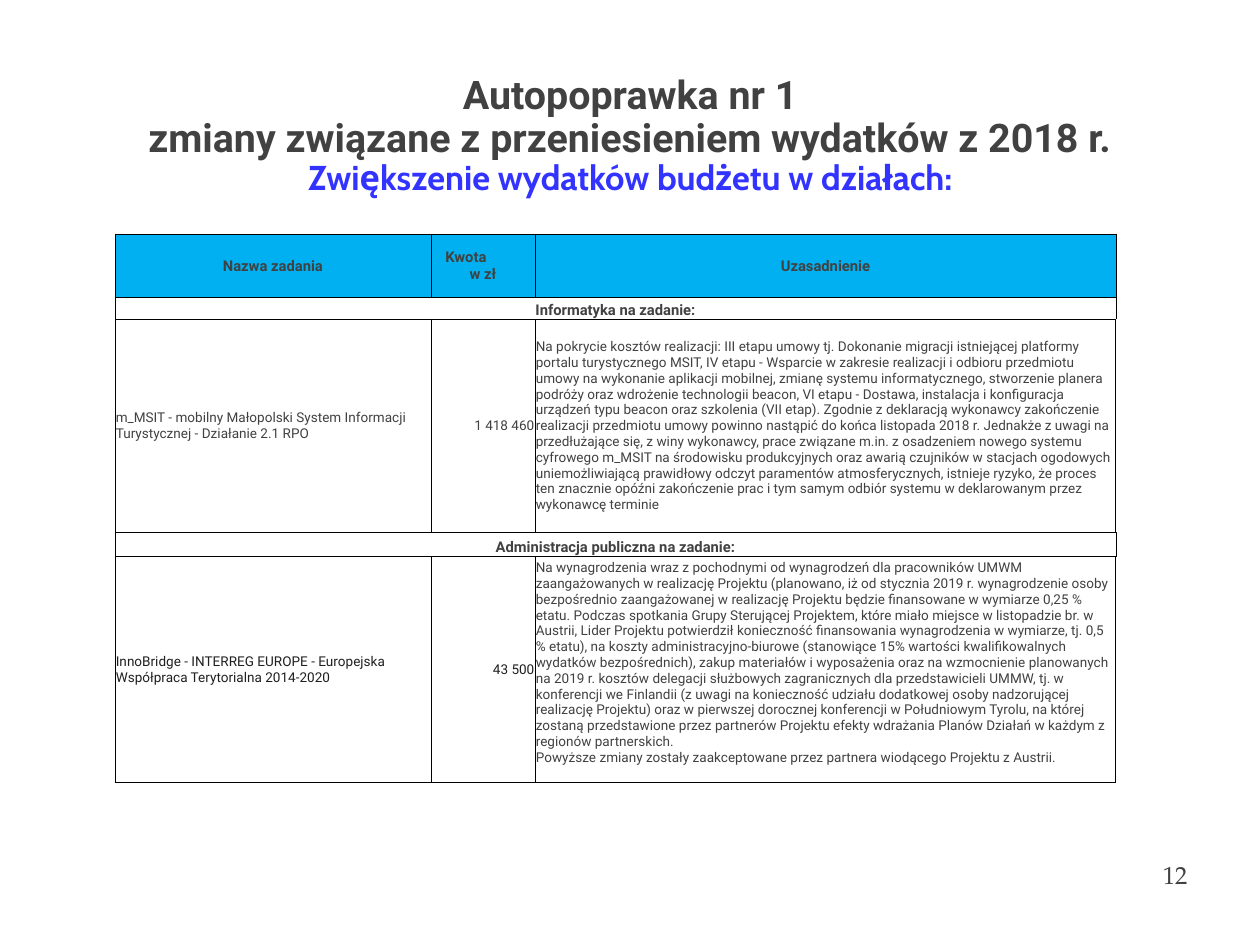
from lxml import etree
from pptx import Presentation
from pptx.dml.color import RGBColor
from pptx.enum import text
from pptx.oxml.ns import qn
from pptx.util import Cm, Pt

COLOURS = {"dark": "414141", "black": "202020", "blue": "3333FF",
           "header": "00B0F0", "border": "000000"}
LEFT, CENTRE, RIGHT = text.PP_ALIGN.LEFT, text.PP_ALIGN.CENTER, text.PP_ALIGN.RIGHT
MIDDLE, BOTTOM = text.MSO_ANCHOR.MIDDLE, text.MSO_ANCHOR.BOTTOM

COLUMNS = [9.05, 2.99, 16.65]
ROWS = [1.82, 0.62, 6.12, 0.69, 6.36]
SECTIONS = {1: "Informatyka na zadanie:", 3: "Administracja publiczna na zadanie:"}
# Each reason is a list of paragraphs, each paragraph a list of sentences.
MSIT_REASON = [[
    "Na pokrycie kosztów realizacji: III etapu umowy tj. Dokonanie migracji istniejącej "
    "platformy portalu turystycznego MSIT, IV etapu - Wsparcie w zakresie realizacji i "
    "odbioru przedmiotu umowy na wykonanie aplikacji mobilnej, zmianę systemu "
    "informatycznego, stworzenie planera podróży oraz wdrożenie technologii beacon, VI "
    "etapu - Dostawa, instalacja i konfiguracja urządzeń typu beacon oraz szkolenia (VII "
    "etap).",
    "Zgodnie z deklaracją wykonawcy zakończenie realizacji przedmiotu umowy powinno "
    "nastąpić do końca listopada 2018 r.",
    "Jednakże z uwagi na przedłużające się, z winy "
    "wykonawcy, prace związane m.in. z osadzeniem nowego systemu cyfrowego m_MSIT na "
    "środowisku produkcyjnych oraz awarią czujników w stacjach ogodowych uniemożliwiającą "
    "prawidłowy odczyt paramentów atmosferycznych, istnieje ryzyko, że proces ten znacznie "
    "opóźni zakończenie prac i tym samym odbiór systemu w deklarowanym przez wykonawcę "
    "terminie",
]]
BRIDGE_REASON = [[
    "Na wynagrodzenia wraz z pochodnymi od wynagrodzeń dla pracowników UMWM zaangażowanych "
    "w realizację Projektu (planowano, iż od stycznia 2019 r. wynagrodzenie osoby "
    "bezpośrednio zaangażowanej w realizację Projektu będzie finansowane w wymiarze 0,25 % "
    "etatu.",
    "Podczas spotkania Grupy Sterującej Projektem, które miało miejsce w listopadzie "
    "br. w Austrii, Lider Projektu potwierdził konieczność finansowania wynagrodzenia w "
    "wymiarze, tj. 0,5 % etatu), na koszty administracyjno-biurowe (stanowiące 15% wartości "
    "kwalifikowalnych wydatków bezpośrednich), zakup materiałów i wyposażenia oraz na "
    "wzmocnienie planowanych na 2019 r. kosztów delegacji służbowych zagranicznych dla "
    "przedstawicieli UMMW,",
    "tj. w konferencji we Finlandii (z uwagi na konieczność udziału "
    "dodatkowej osoby nadzorującej realizację Projektu) oraz w pierwszej dorocznej "
    "konferencji w Południowym Tyrolu, na której zostaną przedstawione przez partnerów "
    "Projektu efekty wdrażania Planów Działań w każdym z regionów partnerskich.",
], [
    "Powyższe zmiany zostały zaakceptowane przez partnera wiodącego Projektu z Austrii.",
]]
TASKS = {
    2: ("m_MSIT - mobilny Małopolski System Informacji Turystycznej - Działanie 2.1 RPO",
        "1 418 460", MSIT_REASON, "dark"),
    4: ("InnoBridge - INTERREG EUROPE - Europejska Współpraca Terytorialna 2014-2020",
        "43 500", BRIDGE_REASON, "black"),
}


def add_span(para, words, size, font="Roboto", colour="dark", bold=False):
    span = para.add_run()
    span.text = words
    span.font.name = font
    span.font.size = Pt(size)
    span.font.bold = bold
    span.font.color.rgb = RGBColor.from_string(COLOURS[colour])


def add_box(page, left, top, width, height, inset=0):
    """Add a centred, wrapping text box and return its first paragraph."""
    frame = page.shapes.add_textbox(Cm(left), Cm(top), Cm(width), Cm(height)).text_frame
    frame.word_wrap = True
    frame.vertical_anchor = MIDDLE
    frame.margin_left = frame.margin_right = Cm(inset)
    frame.margin_top = frame.margin_bottom = Cm(inset)
    para = frame.paragraphs[0]
    para.alignment = CENTRE
    return para


def add_title(page):
    para = add_box(page, 1.42, 2.24, 33.3, 3.38)
    para.line_spacing = 0.9
    for line in ("Autopoprawka nr 1", "zmiany związane z przeniesieniem wydatków z 2018 r."):
        add_span(para, line, 32, bold=True)
        para.add_line_break()
    add_span(para, "Zwiększenie wydatków budżetu w działach:", 28, "Cabin", "blue", True)


def set_borders(cell, outer_left, outer_right):
    """Draw thin borders, thicker on the outer sides that are flagged."""
    properties = cell._tc.get_or_add_tcPr()
    widths = {"L": 1 if outer_left else 0.5, "R": 1 if outer_right else 0.5,
              "T": 0.5, "B": 0.5}
    for side, width in widths.items():
        line = etree.SubElement(properties, qn(f"a:ln{side}"), w=str(Pt(width)))
        fill = etree.SubElement(line, qn("a:solidFill"))
        etree.SubElement(fill, qn("a:srgbClr"), val=COLOURS["border"])


def fill_cell(cell, lines, size, align=LEFT, colour="dark", bold=False, anchor=MIDDLE):
    cell.vertical_anchor = anchor
    frame = cell.text_frame
    for number, line in enumerate(lines):
        para = frame.add_paragraph() if number else frame.paragraphs[0]
        para.alignment = align
        add_span(para, line, size, colour=colour, bold=bold)


def add_grid(page):
    table = page.shapes.add_table(len(ROWS), len(COLUMNS), Cm(3.3), Cm(6.71),
                                  Cm(sum(COLUMNS)), Cm(sum(ROWS))).table
    table.first_row = table.horz_banding = False
    for column, width in zip(table.columns, COLUMNS):
        column.width = Cm(width)
    for row, height in zip(table.rows, ROWS):
        row.height = Cm(height)
    last = len(COLUMNS) - 1
    for row in range(len(ROWS)):
        for column in range(len(COLUMNS)):
            cell = table.cell(row, column)
            set_borders(cell, row > 1 and column == 0, row > 1 and column == last)
            cell.margin_left = cell.margin_right = cell.margin_top = Cm(0.02)
            cell.margin_bottom = 0
            if row == 0:
                cell.fill.solid()
                cell.fill.fore_color.rgb = RGBColor.from_string(COLOURS["header"])
            else:
                cell.fill.background()
    return table


def add_budget_table(page):
    table = add_grid(page)
    headings = (["Nazwa zadania"], ["Kwota", "w zł"], ["Uzasadnienie"])
    for column, heading in enumerate(headings):
        fill_cell(table.cell(0, column), heading, 12, CENTRE, bold=True)
    amount_heading = table.cell(0, 1).text_frame.paragraphs[0]
    amount_heading.alignment = LEFT
    amount_heading._p.get_or_add_pPr().set("marL", str(Cm(0.4)))

    for row, heading in SECTIONS.items():
        cell = table.cell(row, 0)
        cell.merge(table.cell(row, len(COLUMNS) - 1))
        fill_cell(cell, [heading], 12, CENTRE, bold=True, anchor=BOTTOM)
    for row, (name, amount, reason, colour) in TASKS.items():
        fill_cell(table.cell(row, 0), [name], 11, colour=colour)
        fill_cell(table.cell(row, 1), [amount], 11, RIGHT, colour)
        fill_cell(table.cell(row, 2), [" ".join(part) for part in reason], 11)
    table.cell(4, 2).margin_bottom = Cm(0.4)


def main():
    deck = Presentation()
    deck.slide_width, deck.slide_height = Cm(36.12), Cm(27.1)
    page = deck.slides.add_slide(deck.slide_layouts[6])
    add_title(page)
    add_budget_table(page)
    number = add_box(page, 32.66, 24.51, 2.06, 1.14, inset=0.15)
    add_span(number, "12", 20, "TeX Gyre Pagella")
    deck.save("out.pptx")


if __name__ == "__main__":
    main()
